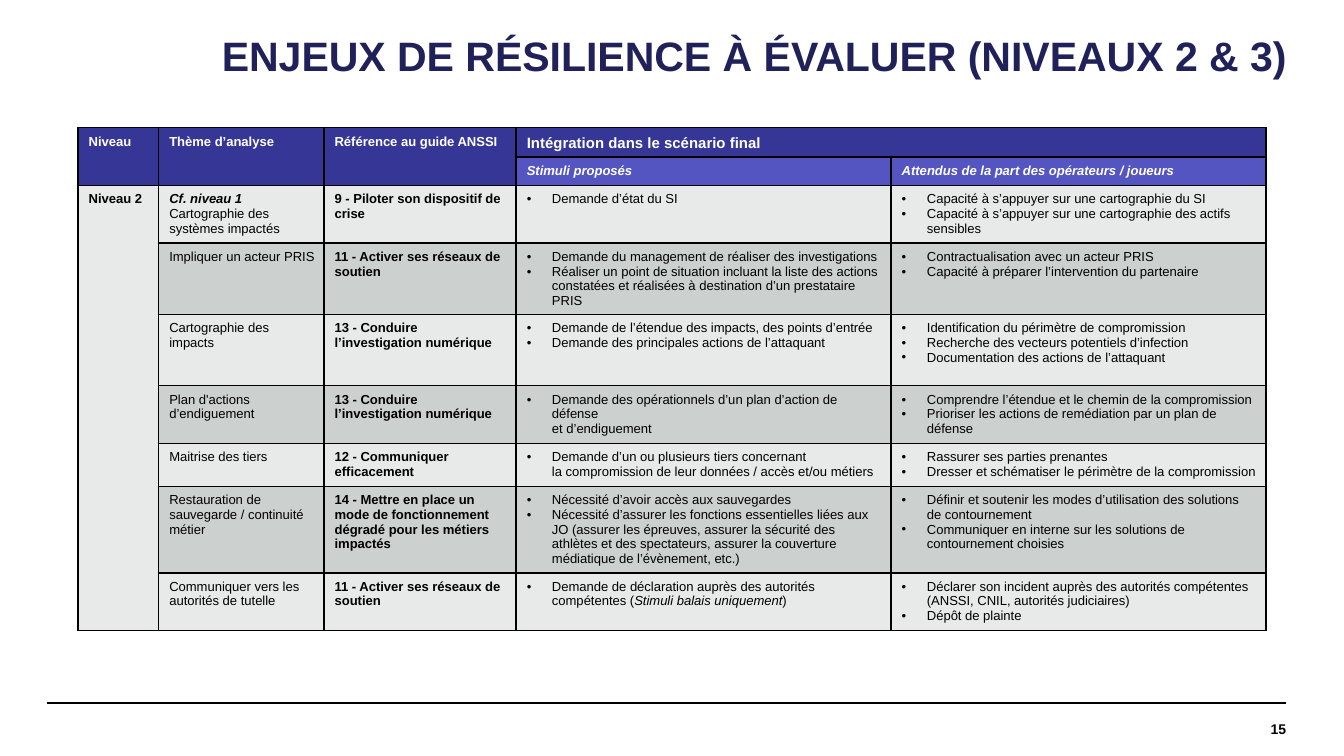
from dataclasses import dataclass

from lxml.etree import SubElement
from pptx import Presentation
from pptx.dml.color import RGBColor
from pptx.enum.shapes import MSO_CONNECTOR
from pptx.enum.text import MSO_ANCHOR as Anchor, PP_ALIGN as Align
from pptx.oxml import parse_xml
from pptx.oxml.ns import nsdecls, qn
from pptx.util import Inches, Pt

FONT = "Arial"
BLACK = RGBColor(0x00, 0x00, 0x00)
WHITE = RGBColor(0xFF, 0xFF, 0xFF)
NAVY = RGBColor(0x21, 0x21, 0x5A)
INDIGO = RGBColor(0x36, 0x36, 0x96)
VIOLET = RGBColor(0x55, 0x55, 0xC1)
PALE = RGBColor(0xE7, 0xEA, 0xE9)
GREY = RGBColor(0xCC, 0xD1, 0xCF)

WIDE = Inches(10)
HIGH = WIDE * 9 // 16
WIDTHS = [0.6, 1.23, 1.43, 2.79, 2.79]
HEADS = [0.22, 0.21]
INDENT = Pt(13.5)


@dataclass(frozen=True)
class Style:
    size: float = 7
    color: RGBColor = BLACK
    bold: bool = False
    italic: bool = False


@dataclass(frozen=True)
class Issue:
    """One row of the table; underscores enclose italic words."""
    height: float
    theme: str
    guide: str
    stimuli: list[str]
    goals: list[str]
    note: str = ""


BODY = Style()
BOLD = Style(bold=True)
NOTE = Style(bold=True, italic=True)
HEAD = Style(color=WHITE, bold=True)
TOP = Style(size=8, color=WHITE, bold=True)
SUB = Style(color=WHITE, bold=True, italic=True)

ISSUES = [
    Issue(0.43, "Cartographie des systèmes impactés", "9 - Piloter son dispositif de crise",
          ["Demande d’état du SI"],
          ["Capacité à s’appuyer sur une cartographie du SI",
           "Capacité à s’appuyer sur une cartographie des actifs sensibles"],
          note="Cf. niveau 1"),
    Issue(0.53, "Impliquer un acteur PRIS", "11 - Activer ses réseaux de soutien",
          ["Demande du management de réaliser des investigations",
           "Réaliser un point de situation incluant la liste des actions constatées "
           "et réalisées à destination d’un prestataire PRIS"],
          ["Contractualisation avec un acteur PRIS",
           "Capacité à préparer l’intervention du partenaire"]),
    Issue(0.53, "Cartographie des impacts", "13 - Conduire l’investigation numérique",
          ["Demande de l’étendue des impacts, des points d’entrée",
           "Demande des principales actions de l’attaquant"],
          ["Identification du périmètre de compromission",
           "Recherche des vecteurs potentiels d’infection",
           "Documentation des actions de l’attaquant"]),
    Issue(0.43, "Plan d'actions d’endiguement", "13 - Conduire l’investigation numérique",
          ["Demande des opérationnels d’un plan d’action de défense \net d’endiguement"],
          ["Comprendre l’étendue et le chemin de la compromission",
           "Prioriser les actions de remédiation par un plan de défense"]),
    Issue(0.32, "Maitrise des tiers", "12 - Communiquer efficacement",
          ["Demande d’un ou plusieurs tiers concernant \n"
           "la compromission de leur données / accès et/ou métiers"],
          ["Rassurer ses parties prenantes",
           "Dresser et schématiser le périmètre de la compromission"]),
    Issue(0.64, "Restauration de sauvegarde / continuité métier",
          "14 - Mettre en place un mode de fonctionnement dégradé pour les métiers impactés",
          ["Nécessité d’avoir accès aux sauvegardes",
           "Nécessité d’assurer les fonctions essentielles liées aux JO (assurer les épreuves, "
           "assurer la sécurité des athlètes et des spectateurs, assurer la couverture "
           "médiatique de l’évènement, etc.)"],
          ["Définir et soutenir les modes d’utilisation des solutions \nde contournement",
           "Communiquer en interne sur les solutions de contournement choisies"]),
    Issue(0.43, "Communiquer vers les autorités de tutelle", "11 - Activer ses réseaux de soutien",
          ["Demande de déclaration auprès des autorités compétentes (_Stimuli balais uniquement_)"],
          ["Déclarer son incident auprès des autorités compétentes "
           "(ANSSI, CNIL, autorités judiciaires)",
           "Dépôt de plainte"]),
]


def set_all(target, values: dict) -> None:
    for name, value in values.items():
        setattr(target, name, value)


def add_text(para, text: str, style: Style) -> None:
    for i, part in enumerate(text.split("_")):
        for j, line in enumerate(part.split("\n")):
            if j:
                para.add_line_break()
            run = para.add_run()
            run.text = line
            set_all(run.font, {"name": FONT, "size": Pt(style.size), "bold": style.bold,
                               "italic": style.italic or i % 2 == 1})
            run.font.color.rgb = style.color


def add_bullet(para) -> None:
    props = para._p.get_or_add_pPr()
    props.set("marL", str(INDENT))
    props.set("indent", str(-INDENT))
    SubElement(props, qn("a:buFont")).set("typeface", FONT)
    SubElement(props, qn("a:buChar")).set("char", "•")


def write(cell, lines: list[tuple[str, Style]], bullets: bool = False) -> None:
    frame = cell.text_frame
    for i, (text, style) in enumerate(lines):
        para = frame.add_paragraph() if i else frame.paragraphs[0]
        if bullets:
            add_bullet(para)
        add_text(para, text, style)


def paint(cell, color: RGBColor) -> None:
    """Fill a cell, set its margins and border it on all sides."""
    set_all(cell, {"margin_left": Inches(0.08), "margin_right": Inches(0.07),
                   "margin_top": Inches(0.05), "margin_bottom": Inches(0.01),
                   "vertical_anchor": Anchor.TOP})
    cell.fill.solid()
    cell.fill.fore_color.rgb = color
    props = cell._tc.get_or_add_tcPr()
    for i, side in enumerate(("lnL", "lnR", "lnT", "lnB")):
        props.insert(i, parse_xml(
            f'<a:{side} {nsdecls("a")} w="{Pt(1)}"><a:solidFill>'
            f'<a:srgbClr val="{BLACK}"/></a:solidFill></a:{side}>'))


def add_grid(slide) -> None:
    heights = HEADS + [issue.height for issue in ISSUES]
    frame = slide.shapes.add_table(
        len(heights), len(WIDTHS), Inches(0.58), Inches(0.95),
        Inches(sum(WIDTHS)), Inches(sum(heights)))
    table = frame.table
    set_all(table, {"first_row": False, "horz_banding": False})
    for col, width in zip(table.columns, WIDTHS):
        col.width = Inches(width)
    for row, height in zip(table.rows, heights):
        row.height = Inches(height)

    last = len(heights) - 1
    for r in range(len(heights)):
        for c in range(len(WIDTHS)):
            if r < 2:
                color = VIOLET if r == 1 and c > 2 else INDIGO
            else:
                color = GREY if r % 2 and c else PALE
            paint(table.cell(r, c), color)
    for c in range(3):
        table.cell(0, c).merge(table.cell(1, c))
    table.cell(0, 3).merge(table.cell(0, 4))
    table.cell(2, 0).merge(table.cell(last, 0))

    labels = [(0, 0, "Niveau", HEAD), (0, 1, "Thème d’analyse", HEAD),
              (0, 2, "Référence au guide ANSSI", HEAD),
              (0, 3, "Intégration dans le scénario final", TOP),
              (1, 3, "Stimuli proposés", SUB),
              (1, 4, "Attendus de la part des opérateurs / joueurs", SUB),
              (2, 0, "Niveau 2", BOLD)]
    for r, c, text, style in labels:
        write(table.cell(r, c), [(text, style)])
    for r, issue in enumerate(ISSUES, start=2):
        note = [(issue.note, NOTE)] if issue.note else []
        write(table.cell(r, 1), note + [(issue.theme, BODY)])
        write(table.cell(r, 2), [(issue.guide, BOLD)])
        for c, items in ((3, issue.stimuli), (4, issue.goals)):
            write(table.cell(r, c), [(item, BODY) for item in items], bullets=True)


def add_title(slide) -> None:
    title = slide.shapes.title
    set_all(title, {"left": Inches(1.53), "top": Inches(0.1),
                    "width": Inches(8.5), "height": Inches(0.67)})
    set_all(title.text_frame, {"vertical_anchor": Anchor.MIDDLE, "word_wrap": True})
    para = title.text_frame.paragraphs[0]
    para._p.get_or_add_pPr().set("marL", str(Inches(0.02)))
    set_all(para, {"alignment": Align.LEFT, "line_spacing": 0.9})
    add_text(para, "ENJEUX DE RÉSILIENCE À ÉVALUER (NIVEAUX 2 & 3)", Style(22, NAVY, True))


def add_foot(slide) -> None:
    rule = slide.shapes.add_connector(
        MSO_CONNECTOR.STRAIGHT, Inches(0.35), Inches(5.23), Inches(9.57), Inches(5.23))
    rule.line.color.rgb = BLACK
    rule.line.width = Pt(0.8)
    SubElement(rule._element.spPr, qn("a:effectLst"))
    box = slide.shapes.add_textbox(Inches(8.09), Inches(5.23), Inches(1.48), Inches(0.39))
    set_all(box.text_frame, {"margin_left": 0, "margin_right": 0, "margin_top": 0,
                             "margin_bottom": 0, "word_wrap": True,
                             "vertical_anchor": Anchor.MIDDLE})
    para = box.text_frame.paragraphs[0]
    para.alignment = Align.RIGHT
    add_text(para, "15", Style(7.5, bold=True))


def main() -> None:
    deck = Presentation()
    set_all(deck, {"slide_width": WIDE, "slide_height": HIGH})
    slide = deck.slides.add_slide(deck.slide_layouts[5])
    add_foot(slide)
    add_title(slide)
    add_grid(slide)
    deck.save("out.pptx")


if __name__ == "__main__":
    main()
